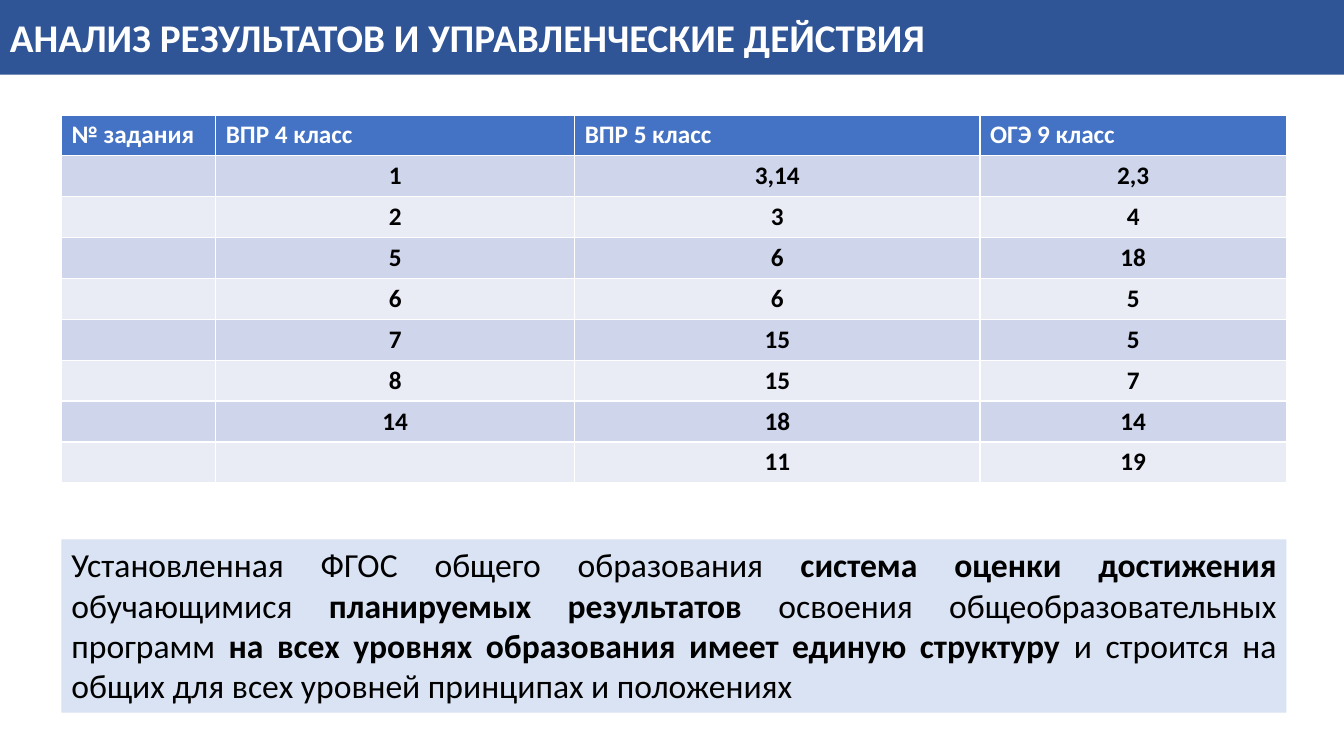
from pptx import Presentation
from pptx import util as u
from pptx.dml.color import RGBColor
from pptx.enum import shapes, text

TITLE = "АНАЛИЗ РЕЗУЛЬТАТОВ И УПРАВЛЕНЧЕСКИЕ ДЕЙСТВИЯ"
HEADS = ["№ задания", "ВПР 4 класс", "ВПР 5 класс", "ОГЭ 9 класс"]
TASKS = [
    ("", "1", "3,14", "2,3"),
    ("", "2", "3", "4"),
    ("", "5", "6", "18"),
    ("", "6", "6", "5"),
    ("", "7", "15", "5"),
    ("", "8", "15", "7"),
    ("", "14", "18", "14"),
    ("", "", "11", "19"),
]
# (words, bold)
NOTE = [
    ("Установленная ФГОС общего образования ", False),
    ("система оценки достижения ", True),
    ("обучающимися ", False),
    ("планируемых результатов ", True),
    ("освоения общеобразовательных программ ", False),
    ("на всех уровнях образования имеет единую структуру ", True),
    ("и строится на общих для всех уровней принципах и положениях", False),
]

NAVY = RGBColor(0x2F, 0x55, 0x97)
BLUE = RGBColor(0x44, 0x72, 0xC4)
BANDS = [RGBColor(0xCF, 0xD5, 0xEA), RGBColor(0xE9, 0xEB, 0xF5)]
PALE = RGBColor(0xDA, 0xE3, 0xF3)
WHITE = RGBColor(0xFF, 0xFF, 0xFF)
BLACK = RGBColor(0, 0, 0)

WIDE, HIGH = 13.33, 7.5
LEFT = 0.61
COLS = [1.53, 3.56, 4.02, 3.04]
SPAN = sum(COLS)
ROW = 0.4


def style(para, size, color, align, bold=None):
    para.alignment = align
    font = para.font
    font.name, font.size, font.bold = "Calibri", u.Pt(size), bold
    font.color.rgb = color


def panel(slide, left, top, width, height, color, anchor):
    box = slide.shapes.add_shape(
        shapes.MSO_SHAPE.RECTANGLE, *map(u.Inches, (left, top, width, height)))
    box.shadow.inherit = False
    box.fill.solid()
    box.fill.fore_color.rgb = color
    box.line.fill.background()
    box.text_frame.word_wrap = True
    box.text_frame.vertical_anchor = anchor
    return box.text_frame


def grid(slide, top):
    rows = [HEADS, *TASKS]
    table = slide.shapes.add_table(
        len(rows), len(COLS), u.Inches(LEFT), u.Inches(top),
        u.Inches(SPAN), u.Inches(ROW * len(rows))).table
    for col, width in zip(table.columns, COLS):
        col.width = u.Inches(width)
    for r, row in enumerate(rows):
        table.rows[r].height = u.Inches(ROW)
        for c, words in enumerate(row):
            cell = table.cell(r, c)
            cell.text = words
            cell.fill.solid()
            cell.fill.fore_color.rgb = BANDS[(r - 1) % 2] if r else BLUE
            align = text.PP_ALIGN.CENTER if r else text.PP_ALIGN.LEFT
            style(cell.text_frame.paragraphs[0], 18,
                  BLACK if r else WHITE, align, True)


def main():
    deck = Presentation()
    deck.slide_width, deck.slide_height = u.Inches(WIDE), u.Inches(HIGH)
    slide = deck.slides.add_slide(deck.slide_layouts[6])

    head = panel(slide, 0, 0, WIDE, 0.74, NAVY, text.MSO_ANCHOR.MIDDLE)
    head.text = TITLE
    style(head.paragraphs[0], 28, WHITE, text.PP_ALIGN.LEFT, True)

    grid(slide, 1.14)

    note = panel(slide, LEFT, 5.35, SPAN, 1.72, PALE, text.MSO_ANCHOR.TOP)
    para = note.paragraphs[0]
    style(para, 24, BLACK, text.PP_ALIGN.JUSTIFY)
    for words, bold in NOTE:
        run = para.add_run()
        run.text, run.font.bold = words, bold

    deck.save("out.pptx")


if __name__ == "__main__":
    main()
